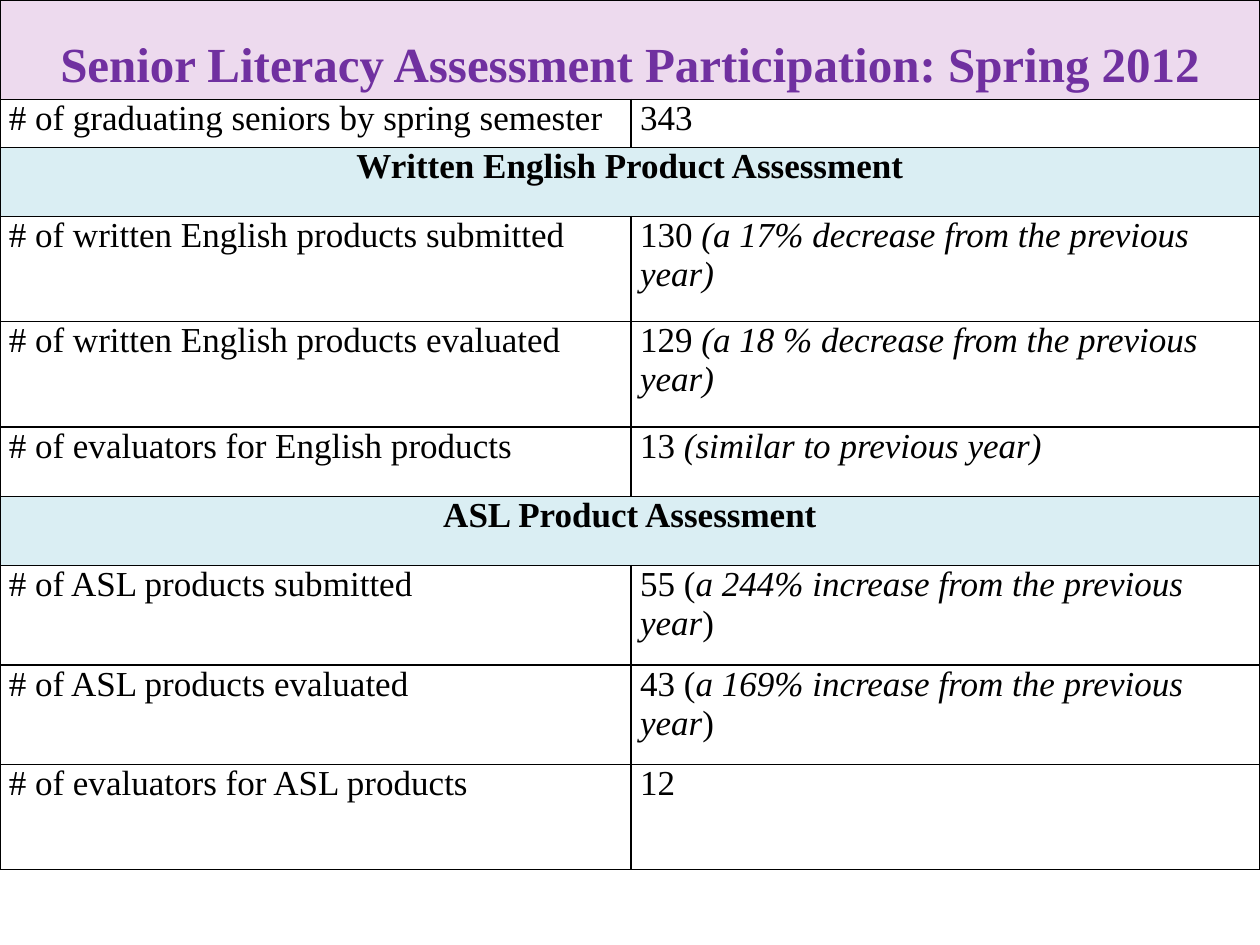
from lxml import etree
from pptx import Presentation
from pptx.dml.color import RGBColor
from pptx.enum.text import MSO_ANCHOR, PP_ALIGN
from pptx.oxml.ns import qn
from pptx.util import Inches, Pt

CENTER, LEFT = PP_ALIGN.CENTER, PP_ALIGN.LEFT
BOTTOM, TOP = MSO_ANCHOR.BOTTOM, MSO_ANCHOR.TOP
BLACK = RGBColor(0x00, 0x00, 0x00)
PURPLE = RGBColor(0x70, 0x30, 0xA0)
PINK = RGBColor(0xED, 0xDA, 0xEE)
AQUA = RGBColor(0xDA, 0xEE, 0xF3)
FONT = "Times New Roman"

# Height and cells of each row; a row of one cell is a heading.
# The parts of a cell alternate between upright and italic.
ROWS = [
    (0.79, [["Senior Literacy Assessment Participation: Spring 2012"]]),
    (0.38, [["# of graduating seniors by spring semester"], ["343"]]),
    (0.55, [["Written English Product Assessment"]]),
    (0.83, [["# of written English products submitted"],
            ["130 ", "(a 17% decrease from the previous year)"]]),
    (0.84, [["# of written English products evaluated"],
            ["129 ", "(a 18 % decrease from the previous year)"]]),
    (0.55, [["# of evaluators for English products"],
            ["13 ", "(similar to previous year)"]]),
    (0.55, [["ASL Product Assessment"]]),
    (0.79, [["# of ASL products submitted"],
            ["55 (", "a 244% increase from the previous year", ")"]]),
    (0.79, [["# of ASL products evaluated"],
            ["43 (", "a 169% increase from the previous year", ")"]]),
    (0.83, [["# of evaluators for ASL products"], ["12"]]),
]
COLS = [5.01, 4.99]


def border(cell):
    props = cell._tc.get_or_add_tcPr()
    for spot, side in enumerate(("lnL", "lnR", "lnT", "lnB")):
        line = etree.Element(qn(f"a:{side}"), w=str(Pt(1)))
        fill = etree.SubElement(line, qn("a:solidFill"))
        etree.SubElement(fill, qn("a:srgbClr"), val=str(BLACK))
        props.insert(spot, line)


def write(cell, parts, size, color, bold, align):
    cell.margin_left = cell.margin_right = Inches(0.07)
    cell.margin_top = cell.margin_bottom = 0
    para = cell.text_frame.paragraphs[0]
    para.alignment = align
    for place, part in enumerate(parts):
        run = para.add_run()
        run.text = part
        font = run.font
        font.name, font.size, font.bold = FONT, Pt(size), bold
        font.italic = place % 2 == 1
        font.color.rgb = color


def main():
    deck = Presentation()
    deck.slide_width, deck.slide_height = Inches(10), Inches(7.5)
    slide = deck.slides.add_slide(deck.slide_layouts[6])
    high = sum(row[0] for row in ROWS)
    table = slide.shapes.add_table(
        len(ROWS), len(COLS), 0, 0, Inches(10), Inches(high)).table
    table.first_row = table.horz_banding = False
    for col, width in zip(table.columns, COLS):
        col.width = Inches(width)

    for num, (height, texts) in enumerate(ROWS):
        table.rows[num].height = Inches(height)
        title, head = num == 0, len(texts) == 1
        cells = [table.cell(num, col) for col in range(len(COLS))]
        for cell in cells:
            if head:
                cell.fill.solid()
                cell.fill.fore_color.rgb = PINK if title else AQUA
            else:
                cell.fill.background()
            border(cell)
        if head:
            cells[0].merge(cells[-1])
        for cell, parts in zip(cells, texts):
            write(cell, parts, 28 if title else 20,
                  PURPLE if title else BLACK, head, CENTER if head else LEFT)
            cell.vertical_anchor = BOTTOM if title else TOP
            if title:
                cell.margin_bottom = Inches(0.05)

    deck.save("out.pptx")


if __name__ == "__main__":
    main()
